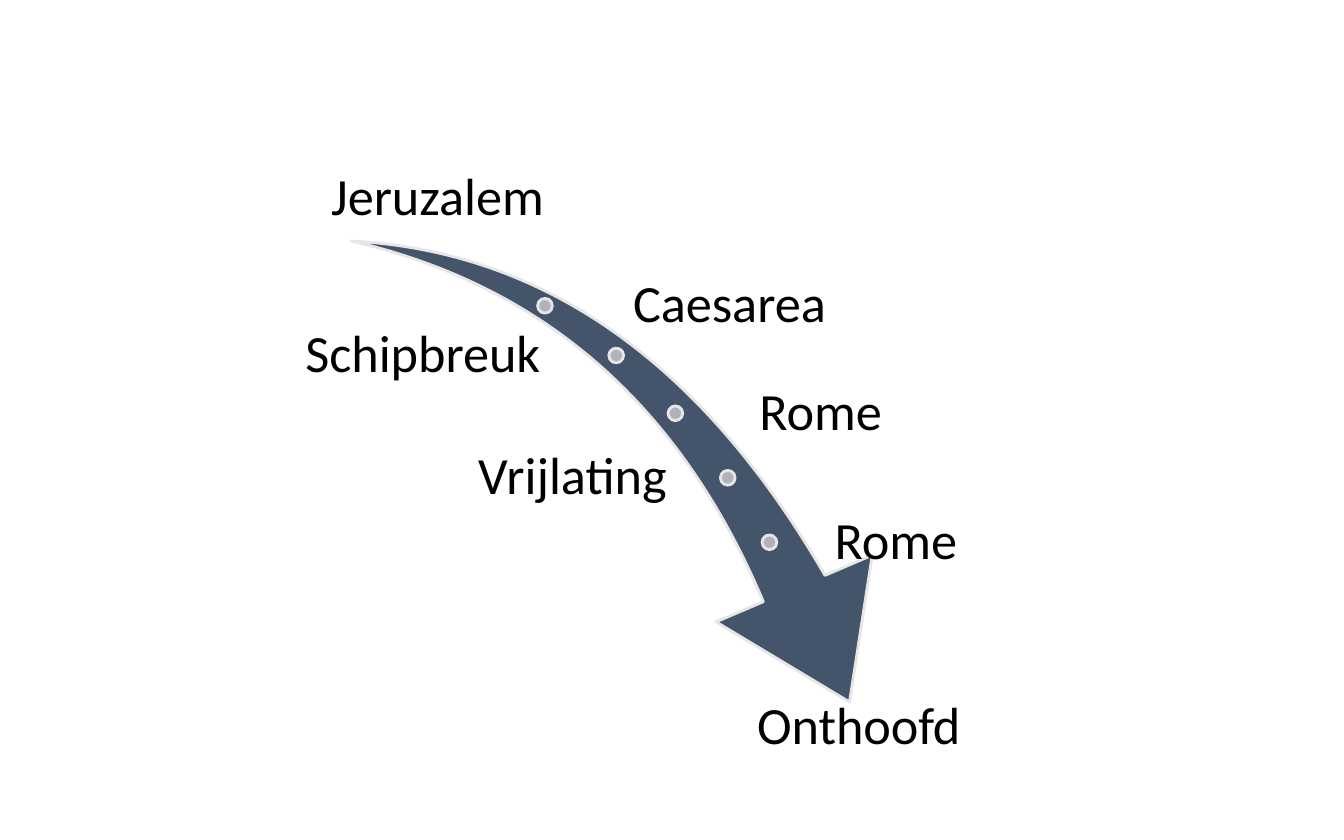
import pptx
import pptx.dml.color
import pptx.enum.shapes
import pptx.enum.text
import pptx.util

SHAPES = pptx.enum.shapes.MSO_SHAPE
ALIGN = pptx.enum.text.PP_ALIGN
ANCHOR = pptx.enum.text.MSO_ANCHOR
INCH = pptx.util.Inches

COLOURS = {"route": "44546A", "stop": "B0B4B9", "outline": "E7E6E6", "label": "000000"}
LEFT, RIGHT = 2.23, 7.78
LABEL_HEIGHT = 0.81
STOP_SIZE = 0.11

STOPS = [(4, 2.22), (4.53, 2.59), (4.97, 3.02), (5.36, 3.5), (5.67, 3.98)]
LABELS = [
    ("Jeruzalem", LEFT, 4.28, 0.92, ALIGN.CENTER, ANCHOR.BOTTOM),
    ("Caesarea", 4.67, RIGHT, 1.87, ALIGN.LEFT, ANCHOR.MIDDLE),
    ("Schipbreuk", LEFT, 4.06, 2.24, ALIGN.RIGHT, ANCHOR.MIDDLE),
    ("Rome", 5.61, RIGHT, 2.67, ALIGN.LEFT, ANCHOR.MIDDLE),
    ("Vrijlating", LEFT, 5, 3.15, ALIGN.RIGHT, ANCHOR.MIDDLE),
    ("Rome", 6.17, RIGHT, 3.63, ALIGN.LEFT, ANCHOR.MIDDLE),
    ("Onthoofd", 5, RIGHT, 5.16, ALIGN.CENTER, ANCHOR.TOP),
]


def colour(name):
    return pptx.dml.color.RGBColor.from_string(COLOURS[name])


def add_outlined(slide, preset, left, top, width, height, fill):
    outlined = slide.shapes.add_shape(preset, *map(INCH, (left, top, width, height)))
    outlined.shadow.inherit = False
    outlined.fill.solid()
    outlined.fill.fore_color.rgb = colour(fill)
    outlined.line.color.rgb = colour("outline")
    outlined.line.width = pptx.util.Pt(1.5)
    return outlined


def add_route(slide):
    route = add_outlined(slide, SHAPES.SWOOSH_ARROW, 2.52, 1.92, 4.35, 3.04, "route")
    route.rotation = 73.3
    route.adjustments[0] = 0.163
    route.adjustments[1] = 0.314


def add_label(slide, wording, left, right, top, alignment, anchor):
    label = slide.shapes.add_textbox(*map(INCH, (left, top, right - left, LABEL_HEIGHT)))
    frame = label.text_frame
    frame.text = wording
    frame.word_wrap = True
    frame.vertical_anchor = anchor
    frame.margin_left = frame.margin_right = INCH(0.04)
    frame.margin_top = frame.margin_bottom = INCH(0.04)
    paragraph = frame.paragraphs[0]
    paragraph.alignment = alignment
    paragraph.line_spacing = 0.9
    paragraph.space_after = pptx.util.Pt(9.8)
    font = paragraph.runs[0].font
    font.name = "Calibri"
    font.size = pptx.util.Pt(28)
    font.color.rgb = colour("label")


def main():
    presentation = pptx.Presentation()
    presentation.slide_width = INCH(10)
    presentation.slide_height = INCH(6.25)
    slide = presentation.slides.add_slide(presentation.slide_layouts[6])
    add_route(slide)
    for left, top in STOPS:
        add_outlined(slide, SHAPES.OVAL, left, top, STOP_SIZE, STOP_SIZE, "stop")
    for label in LABELS:
        add_label(slide, *label)
    presentation.save("out.pptx")


if __name__ == "__main__":
    main()
